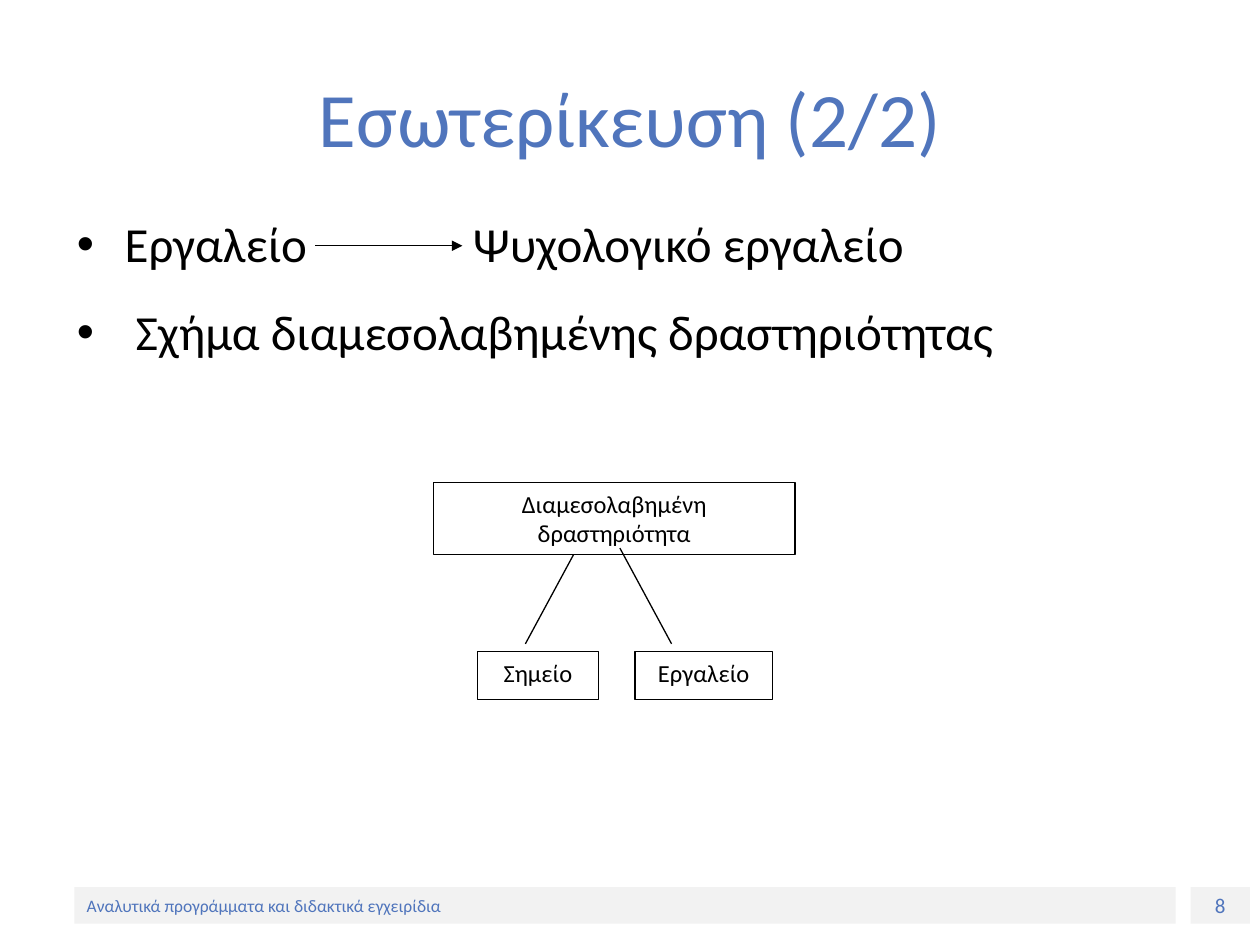
from pptx import Presentation
from pptx.dml.color import RGBColor
from pptx.enum.shapes import MSO_CONNECTOR, MSO_SHAPE
from pptx.enum.text import MSO_ANCHOR, MSO_AUTO_SIZE, PP_ALIGN
from pptx.oxml.ns import qn
from pptx.util import Inches, Pt
from lxml import etree

LINE, RECT = MSO_CONNECTOR.STRAIGHT, MSO_SHAPE.RECTANGLE
TOP, MID = MSO_ANCHOR.TOP, MSO_ANCHOR.MIDDLE
LEFT, MIDDLE = PP_ALIGN.LEFT, PP_ALIGN.CENTER
FIXED = MSO_AUTO_SIZE.NONE

HUES = {"blue": "5075BC", "ink": "000000", "paper": "FFFFFF", "band": "F2F2F2"}
FONT = "Calibri"
WIDE, HIGH = Inches(10), Inches(7.5)
COL, ROW = WIDE / 100, HIGH / 75  # grid of 100 columns by 75 rows


def hue(name):
    return RGBColor.from_string(HUES[name])


def grid(box):
    """Turn columns and rows into slide lengths."""
    x, y, w, h = box
    return round(x * COL), round(y * ROW), round(w * COL), round(h * ROW)


def place(shape, box):
    shape.left, shape.top, shape.width, shape.height = grid(box)


def write(para, text, size=14, color="ink", align=LEFT, track=0):
    """Add one run of text; track widens the space after each letter, in points."""
    para.alignment = align
    run = para.add_run()
    run.text = text
    run.font.name, run.font.size = FONT, Pt(size)
    run.font.color.rgb = hue(color)
    if track:
        run.font._element.set("spc", str(round(track * 100)))


def panel(shapes, box, text, fill="paper", edge=None, anchor=TOP, **form):
    shape = shapes.add_shape(RECT, *grid(box))
    shape.shadow.inherit = False
    shape.fill.solid()
    shape.fill.fore_color.rgb = hue(fill)
    if edge:
        shape.line.color.rgb = hue(edge)
        shape.line.width = Pt(0.75)
    else:
        shape.line.fill.background()
    frame = shape.text_frame
    frame.word_wrap = True
    frame.vertical_anchor = anchor
    write(frame.paragraphs[0], text, **form)


def rule(shapes, start, end, arrow=False):
    x, y, u, v = grid((*start, *end))
    line = shapes.add_connector(LINE, x, y, u, v)
    line.line.color.rgb = hue("ink")
    line.line.width = Pt(0.75)
    if arrow:
        etree.SubElement(line.line._get_or_add_ln(), qn("a:tailEnd"), type="triangle")
    etree.SubElement(line._element.spPr, qn("a:effectLst"))


def bullet(para):
    props = para._p.get_or_add_pPr()
    props.set("marL", str(Inches(0.38)))
    props.set("indent", str(-Inches(0.38)))
    etree.SubElement(props, qn("a:buFont"), typeface="Arial")
    etree.SubElement(props, qn("a:buChar"), char="•")


def title(shape, box):
    place(shape, box)
    frame = shape.text_frame
    frame.vertical_anchor = MID
    write(frame.paragraphs[0], "Εσωτερίκευση (2/2)", size=44, color="blue", align=MIDDLE)


def points(slide, shape, box):
    place(shape, box)
    frame = shape.text_frame
    frame.auto_size, frame.vertical_anchor = FIXED, TOP
    first, second = frame.paragraphs[0], frame.add_paragraph()
    for para, before, after in ((first, 0, 5.6), (second, 14, 0)):
        para.line_spacing = 0.9
        para.space_before, para.space_after = Pt(before), Pt(after)
        bullet(para)
    # One wide space leaves room for the arrow
    write(first, "Εργαλείο", size=28)
    write(first, " ", size=28, track=88.6)
    write(first, "Ψυχολογικό εργαλείο", size=28)
    write(second, " Σχήμα διαμεσολαβημένης δραστηριότητας", size=28)
    x, y = box[0] + 19.9, box[1] + 2.5
    rule(slide.shapes, (x, y), (x + 11.7, y), arrow=True)


def scheme(slide, box):
    x, y, w, h = box
    shapes = slide.shapes.add_group_shape().shapes
    low = y + h - 3.8
    form = dict(edge="ink", align=MIDDLE)
    rule(shapes, (x + 7.3, low - 0.6), (x + 11.4, y + 5.2))
    panel(shapes, (x, y, w, 5.7), "Διαμεσολαβημένη δραστηριότητα", **form)
    for dx, wide, text in ((3.5, 9.6, "Σημείο"), (16, 10.9, "Εργαλείο")):
        panel(shapes, (x + dx, low, wide, 3.8), text, **form)
    rule(shapes, (x + 18.9, low - 0.6), (x + 14.8, y + 5.2))


def footer(slide, box):
    x, y, w, h = box
    form = dict(fill="band", color="blue", anchor=MID)
    panel(slide.shapes, (x + w - 4.7, y, 4.7, h), "8", size=12, align=MIDDLE, **form)
    panel(slide.shapes, (x, y, w - 5.9, h),
          "Αναλυτικά προγράμματα και διδακτικά εγχειρίδια", size=10, **form)


def main():
    deck = Presentation()
    deck.slide_width, deck.slide_height = WIDE, HIGH
    slide = deck.slides.add_slide(deck.slide_layouts[1])
    slide.background.fill.solid()
    slide.background.fill.fore_color.rgb = hue("paper")
    footer(slide, (5.9, 70.4, 93.3, 2.9))
    title(slide.shapes.title, (5, 3, 90, 12.5))
    points(slide, slide.placeholders[1], (5.1, 17, 90, 49.5))
    scheme(slide, (34.4, 38.3, 28.7, 17.2))
    deck.save("out.pptx")


if __name__ == "__main__":
    main()
